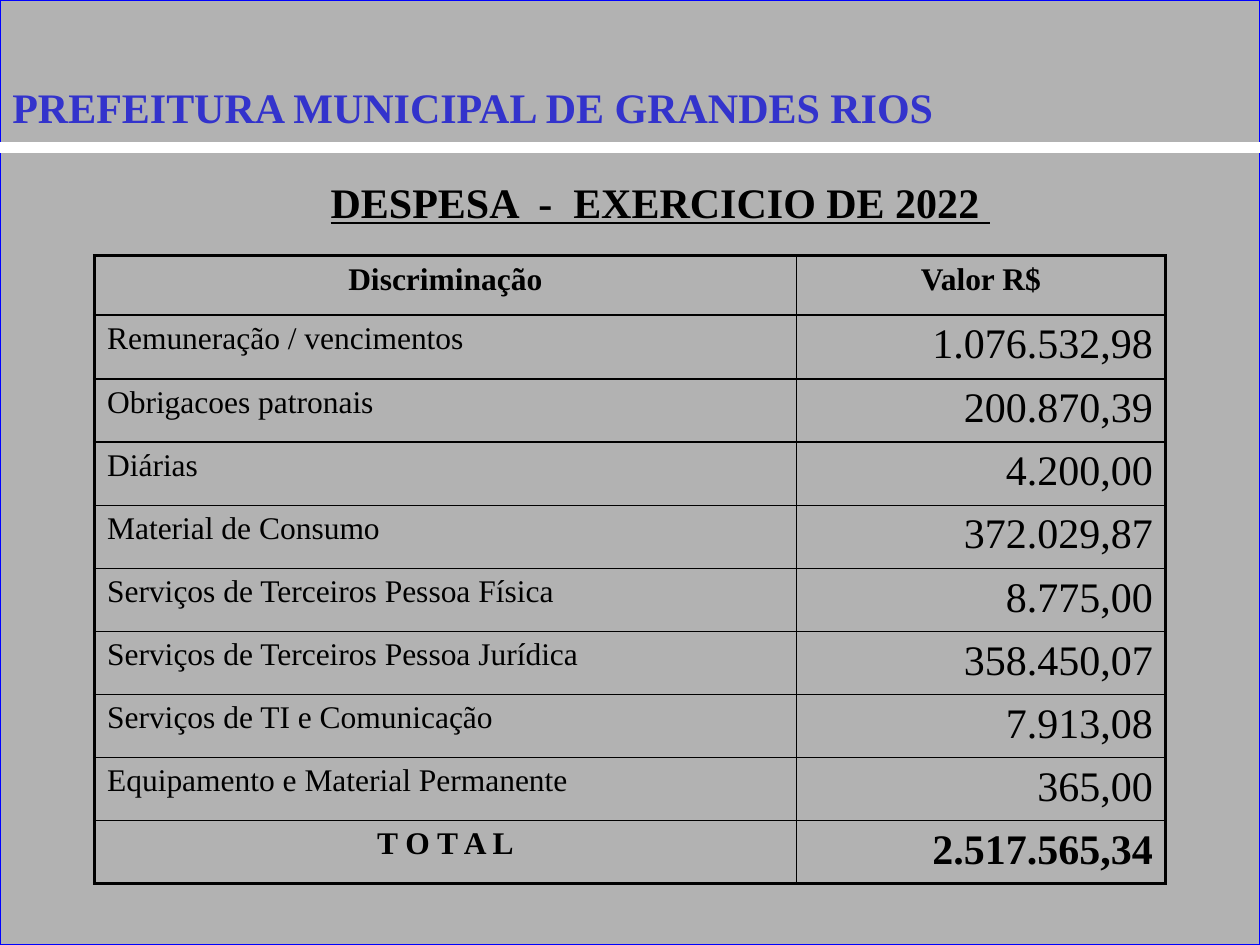
import dataclasses

import lxml.etree
import pptx
import pptx.dml.color
import pptx.enum.shapes
import pptx.enum.text
import pptx.oxml
import pptx.oxml.ns
import pptx.util

Inches = pptx.util.Inches
Pt = pptx.util.Pt
ALIGN = pptx.enum.text.PP_ALIGN
FONT = "Times New Roman"
COLORS = {
    "background": "B2B2B2",
    "frame": "0000FF",
    "rule": "FFFFFF",
    "title": "3333CC",
    "ink": "000000",
    "shadow": "808080",
}
OUTER_BORDER, INNER_BORDER = 2.25, 1
COLUMN_WIDTHS = (5.57, 2.93)
HEADER_HEIGHT, FIRST_HEIGHT, ROW_HEIGHT = 0.47, 0.51, 0.5


@dataclasses.dataclass(frozen=True)
class Expense:
    label: str
    amount: str


@dataclasses.dataclass(frozen=True)
class TextStyle:
    size: float
    align: ALIGN = ALIGN.LEFT
    bold: bool = False
    underline: bool = False
    color: str = "ink"
    shadow: bool = False


@dataclasses.dataclass(frozen=True)
class Heading:
    text: str
    left: float
    top: float
    width: float
    height: float
    style: TextStyle


EXPENSES = (
    Expense("Remuneração / vencimentos", "1.076.532,98"),
    Expense("Obrigacoes patronais", "200.870,39"),
    Expense("Diárias", "4.200,00"),
    Expense("Material de Consumo", "372.029,87"),
    Expense("Serviços de Terceiros Pessoa Física", "8.775,00"),
    Expense("Serviços de Terceiros Pessoa Jurídica", "358.450,07"),
    Expense("Serviços de TI e Comunicação", "7.913,08"),
    Expense("Equipamento e Material Permanente", "365,00"),
)
HEADER = Expense("Discriminação", "Valor R$")
TOTAL = Expense("T O T A L", "2.517.565,34")

HEADINGS = (
    Heading("DESPESA  -  EXERCICIO DE 2022 ", 1.38, 1.35, 7.72, 1.11,
            TextStyle(24, ALIGN.CENTER, bold=True, underline=True)),
    Heading("PREFEITURA MUNICIPAL DE GRANDES RIOS", 0, 0.6, 8.23, 0.5,
            TextStyle(24, bold=True, color="title", shadow=True)),
)


def rgb(name: str) -> pptx.dml.color.RGBColor:
    """Return the named colour."""
    return pptx.dml.color.RGBColor.from_string(COLORS[name])


def write(frame, text: str, style: TextStyle) -> None:
    """Write one styled run into the first paragraph."""
    paragraph = frame.paragraphs[0]
    paragraph.alignment = style.align
    run = paragraph.add_run()
    run.text = text
    run.font.size = Pt(style.size)
    run.font.bold = style.bold
    run.font.underline = style.underline
    run.font.color.rgb = rgb(style.color)
    if style.shadow:
        effects = lxml.etree.SubElement(
            run.font.fill._xPr, pptx.oxml.ns.qn("a:effectLst"))
        shadow = lxml.etree.SubElement(
            effects, pptx.oxml.ns.qn("a:outerShdw"), dist="35921", dir="2700000")
        lxml.etree.SubElement(
            shadow, pptx.oxml.ns.qn("a:srgbClr"), val=COLORS["shadow"])
    run.font.name = FONT


def set_borders(cell, widths: dict[str, float]) -> None:
    """Draw the cell borders in left, right, top, bottom order."""
    properties = cell._tc.get_or_add_tcPr()
    for index, (side, width) in enumerate(widths.items()):
        border = pptx.oxml.parse_xml(
            f'<a:ln{side} {pptx.oxml.ns.nsdecls("a")} w="{Pt(width)}">'
            f'<a:solidFill><a:srgbClr val="{COLORS["ink"]}"/></a:solidFill>'
            f'</a:ln{side}>')
        properties.insert(index, border)


def draw_backdrop(slide) -> None:
    """Draw the framed grey background and the white rule."""
    backdrop = slide.shapes.add_shape(
        pptx.enum.shapes.MSO_SHAPE.RECTANGLE, 0, 0, Inches(10), Inches(7.5))
    backdrop.shadow.inherit = False
    backdrop.fill.solid()
    backdrop.fill.fore_color.rgb = rgb("background")
    backdrop.line.color.rgb = rgb("frame")
    backdrop.line.width = Pt(0.75)
    rule = slide.shapes.add_connector(
        pptx.enum.shapes.MSO_CONNECTOR.STRAIGHT,
        0, Inches(1.17), Inches(10), Inches(1.17))
    rule.line.color.rgb = rgb("rule")
    rule.line.width = Pt(6)
    lxml.etree.SubElement(
        rule._element.spPr, pptx.oxml.ns.qn("a:effectLst"))


def draw_heading(slide, heading: Heading) -> None:
    """Draw a heading text box."""
    box = slide.shapes.add_textbox(
        Inches(heading.left), Inches(heading.top),
        Inches(heading.width), Inches(heading.height))
    box.text_frame.word_wrap = True
    write(box.text_frame, heading.text, heading.style)


def draw_expenses(slide) -> None:
    """Draw the expense table."""
    entries = (HEADER, *EXPENSES, TOTAL)
    last = len(entries) - 1
    heights = [HEADER_HEIGHT, FIRST_HEIGHT] + [ROW_HEIGHT] * (last - 1)
    table = slide.shapes.add_table(
        len(entries), len(COLUMN_WIDTHS), Inches(0.75), Inches(2.03),
        Inches(sum(COLUMN_WIDTHS)), Inches(sum(heights))).table
    table.first_row = False
    table.horz_banding = False
    for column, width in zip(table.columns, COLUMN_WIDTHS):
        column.width = Inches(width)
    for index, (entry, height) in enumerate(zip(entries, heights)):
        table.rows[index].height = Inches(height)
        emphasized = index in (0, last)
        label_style = TextStyle(
            18, ALIGN.CENTER if emphasized else ALIGN.LEFT, emphasized)
        amount_style = (label_style if index == 0
                        else TextStyle(24, ALIGN.RIGHT, emphasized))
        contents = ((entry.label, label_style), (entry.amount, amount_style))
        for position, (text, style) in enumerate(contents):
            cell = table.cell(index, position)
            cell.fill.background()
            write(cell.text_frame, text, style)
            outer = {"L": position == 0, "R": position == 1,
                     "T": index == 0, "B": index == last}
            set_borders(cell, {
                side: OUTER_BORDER if edge else INNER_BORDER
                for side, edge in outer.items()})


def main() -> None:
    """Build and save the slide."""
    presentation = pptx.Presentation()
    presentation.slide_width = Inches(10)
    presentation.slide_height = Inches(7.5)
    slide = presentation.slides.add_slide(presentation.slide_layouts[6])
    draw_backdrop(slide)
    for heading in HEADINGS:
        draw_heading(slide, heading)
    draw_expenses(slide)
    presentation.save("out.pptx")


if __name__ == "__main__":
    main()
